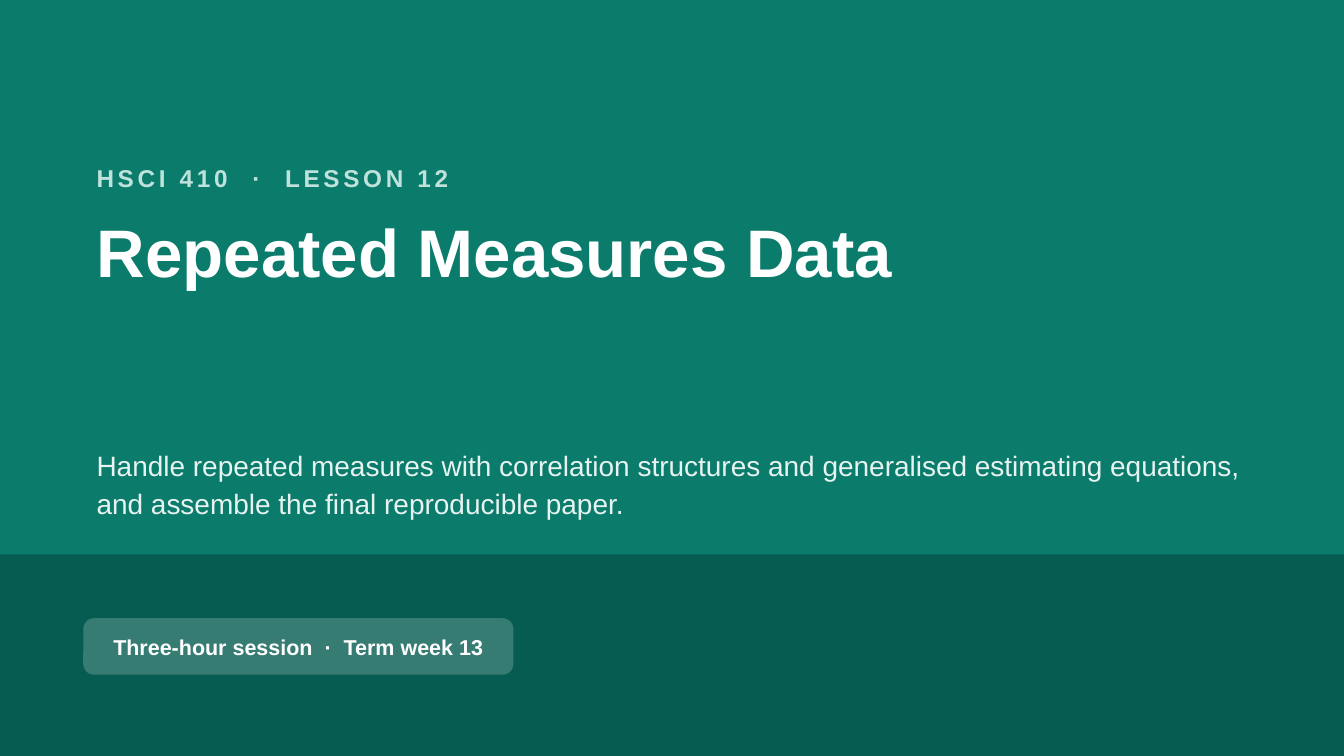
import pptx
import pptx.util
import pptx.dml.color
import pptx.enum.shapes
import pptx.enum.text
import pptx.oxml.ns
import lxml.etree

PX = 4572  # EMU, 200 px to the inch
LEFT, TEXT_WIDTH = 124, 1780
WHITE = "FFFFFF"
ANCHOR = pptx.enum.text.MSO_ANCHOR
ALIGN = pptx.enum.text.PP_ALIGN
SHAPE = pptx.enum.shapes.MSO_SHAPE


def rgb(hex_colour):
    return pptx.dml.color.RGBColor.from_string(hex_colour)


def write(box, text, size, colour, bold=False, anchor=ANCHOR.TOP,
          align=ALIGN.LEFT, line_spacing=None):
    """Fill the box with one formatted paragraph and return its run."""
    frame = box.text_frame
    frame.word_wrap = True
    frame.auto_size = pptx.enum.text.MSO_AUTO_SIZE.NONE
    frame.vertical_anchor = anchor
    paragraph = frame.paragraphs[0]
    run = paragraph.add_run()
    run.text = text
    paragraph.alignment = align
    paragraph.line_spacing = line_spacing
    paragraph.font.name = "Arial"
    paragraph.font.size = pptx.util.Pt(size)
    paragraph.font.bold = bold
    paragraph.font.color.rgb = rgb(colour)
    return run


deck = pptx.Presentation()
deck.slide_width, deck.slide_height = 2000 * PX, 1125 * PX
slide = deck.slides.add_slide(deck.slide_layouts[5])
slide.background.fill.solid()
slide.background.fill.fore_color.rgb = rgb("0B7B6B")

# Footer band
band = slide.shapes.add_shape(SHAPE.RECTANGLE, 0, 825 * PX, 2000 * PX, 300 * PX)
band.shadow.inherit = False
band.fill.solid()
band.fill.fore_color.rgb = rgb("065C50")
band.line.fill.background()

# Course line, title and summary
course = slide.shapes.add_textbox(LEFT * PX, 224 * PX, TEXT_WIDTH * PX, 80 * PX)
course_run = write(course, "HSCI 410  ·  LESSON 12", 13, "BFE3DC", bold=True,
                   anchor=ANCHOR.MIDDLE)
course_run.font.bold = True
course_run._r.get_or_add_rPr().set("spc", "200")

title = slide.shapes.title
title.left, title.top = LEFT * PX, 300 * PX
title.width, title.height = TEXT_WIDTH * PX, 310 * PX
write(title, "Repeated Measures Data", 36, WHITE, bold=True, line_spacing=1.02)

summary = slide.shapes.add_textbox(LEFT * PX, 650 * PX, TEXT_WIDTH * PX, 160 * PX)
write(summary, "Handle repeated measures with correlation structures and generalised "
      "estimating equations, and assemble the final reproducible paper.",
      15, "E6F3F0", line_spacing=1.15)

# Session label on a translucent pill
session = slide.shapes.add_shape(SHAPE.ROUNDED_RECTANGLE,
                                 LEFT * PX, 920 * PX, 640 * PX, 84 * PX)
session.adjustments[0] = 0.19
session.shadow.inherit = False
session.fill.solid()
session.fill.fore_color.rgb = rgb(WHITE)
session.line.fill.background()
white_fill = session.fill._xPr.find(".//" + pptx.oxml.ns.qn("a:srgbClr"))
lxml.etree.SubElement(white_fill, pptx.oxml.ns.qn("a:alpha"), val="20000")
write(session, "Three-hour session  ·  Term week 13", 11.5, WHITE, bold=True,
      anchor=ANCHOR.MIDDLE, align=ALIGN.CENTER)

deck.save("out.pptx")
